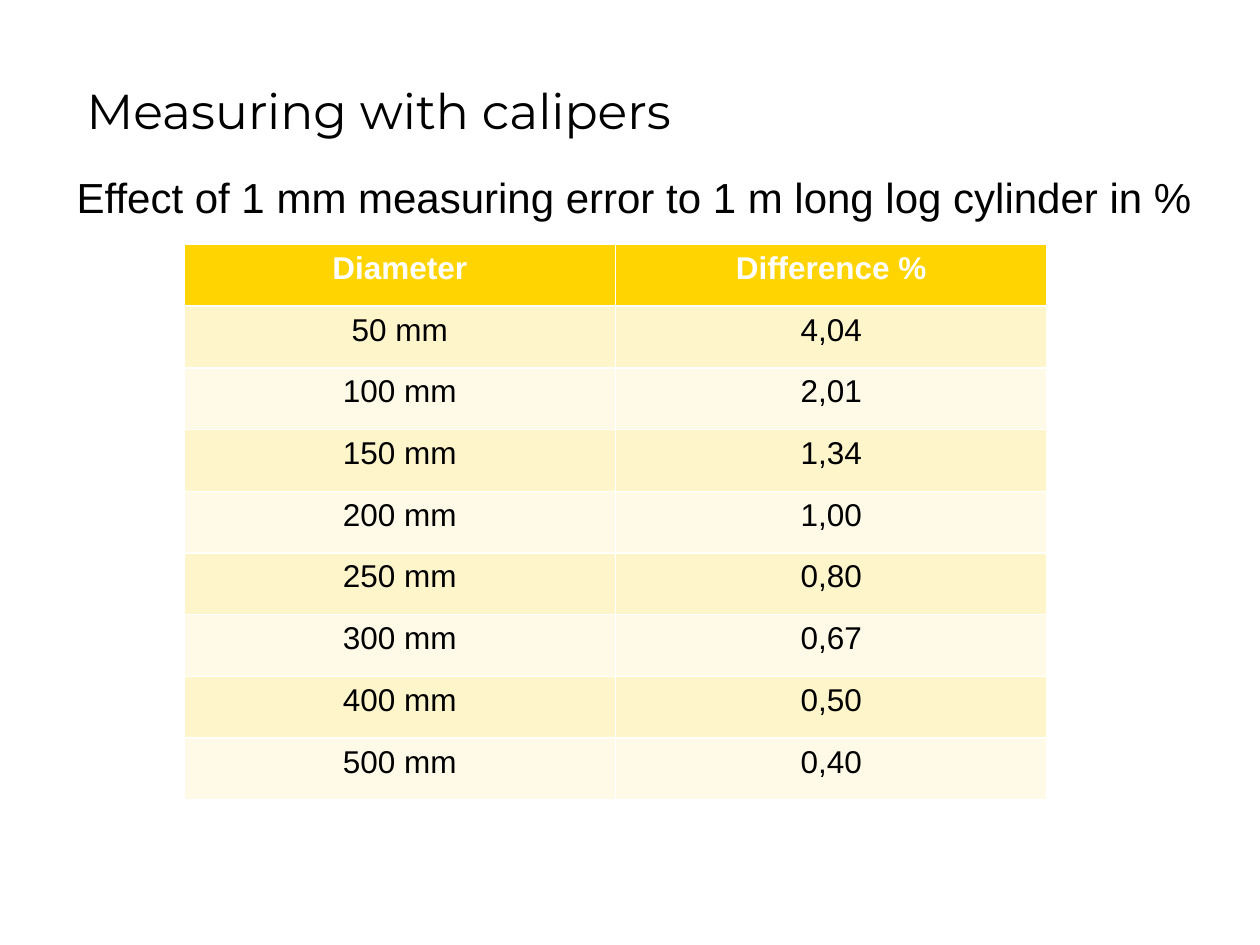
import dataclasses

import pptx
import pptx.dml.color
import pptx.enum.text
import pptx.util

WIDE, HIGH = pptx.util.Inches(10), pptx.util.Inches(7.5)
HUES = {
    "ink": "000000",
    "head": "FFD400",
    "text": "FFFFFF",
    "odd": "FFF5CB",
    "even": "FFFAE7",
}
ROWS = [
    ("Diameter", "Difference %"),
    ("50 mm", "4,04"),
    ("100 mm", "2,01"),
    ("150 mm", "1,34"),
    ("200 mm", "1,00"),
    ("250 mm", "0,80"),
    ("300 mm", "0,67"),
    ("400 mm", "0,50"),
    ("500 mm", "0,40"),
]


@dataclasses.dataclass
class Area:
    """A region in inches, turned into shares of the slide."""
    left: float
    top: float
    width: float
    height: float

    def spans(self) -> tuple[int, ...]:
        return (
            int(WIDE * self.left / 10),
            int(HIGH * self.top / 7.5),
            int(WIDE * self.width / 10),
            int(HIGH * self.height / 7.5),
        )


@dataclasses.dataclass
class Label:
    text: str
    area: Area
    face: str
    size: int
    middle: bool = False
    foot: float = 0.05


LABELS = [
    Label("Measuring with calipers", Area(0.59, 0.36, 8.5, 1.5),
          "Montserrat", 28, middle=True, foot=0.52),
    Label("Effect of 1 mm measuring error to 1 m long log cylinder in %",
          Area(0.51, 1.31, 9.29, 0.51), "Arial", 24),
]
GRID = Area(1.46, 1.94, 6.85, 4.41)


def shade(name: str) -> pptx.dml.color.RGBColor:
    return pptx.dml.color.RGBColor.from_string(HUES[name])


def style(para, face: str, size: int, hue: str, bold: bool = False) -> None:
    font = para.font
    font.name, font.size, font.bold = face, pptx.util.Pt(size), bold
    font.color.rgb = shade(hue)


def write(slide, label: Label) -> None:
    frame = slide.shapes.add_textbox(*label.area.spans()).text_frame
    frame.word_wrap = True
    frame.margin_bottom = pptx.util.Inches(label.foot)
    if label.middle:
        frame.vertical_anchor = pptx.enum.text.MSO_ANCHOR.MIDDLE
    para = frame.paragraphs[0]
    para.text = label.text
    style(para, label.face, label.size, "ink")


def tabulate(slide, area: Area, rows: list[tuple[str, str]]) -> None:
    # The default table style supplies the white rules
    table = slide.shapes.add_table(len(rows), len(rows[0]), *area.spans()).table
    for r, row in enumerate(rows):
        head = r == 0
        band = "head" if head else "odd" if r % 2 else "even"
        for c, text in enumerate(row):
            cell = table.cell(r, c)
            cell.fill.solid()
            cell.fill.fore_color.rgb = shade(band)
            para = cell.text_frame.paragraphs[0]
            para.text = text
            para.alignment = pptx.enum.text.PP_ALIGN.CENTER
            style(para, "Arial", 18, "text" if head else "ink", head)


def main() -> None:
    deck = pptx.Presentation()
    deck.slide_width, deck.slide_height = WIDE, HIGH
    slide = deck.slides.add_slide(deck.slide_layouts[6])
    # Title and subtitle
    for label in LABELS:
        write(slide, label)
    # Error by diameter
    tabulate(slide, GRID, ROWS)
    deck.save("out.pptx")


if __name__ == "__main__":
    main()
